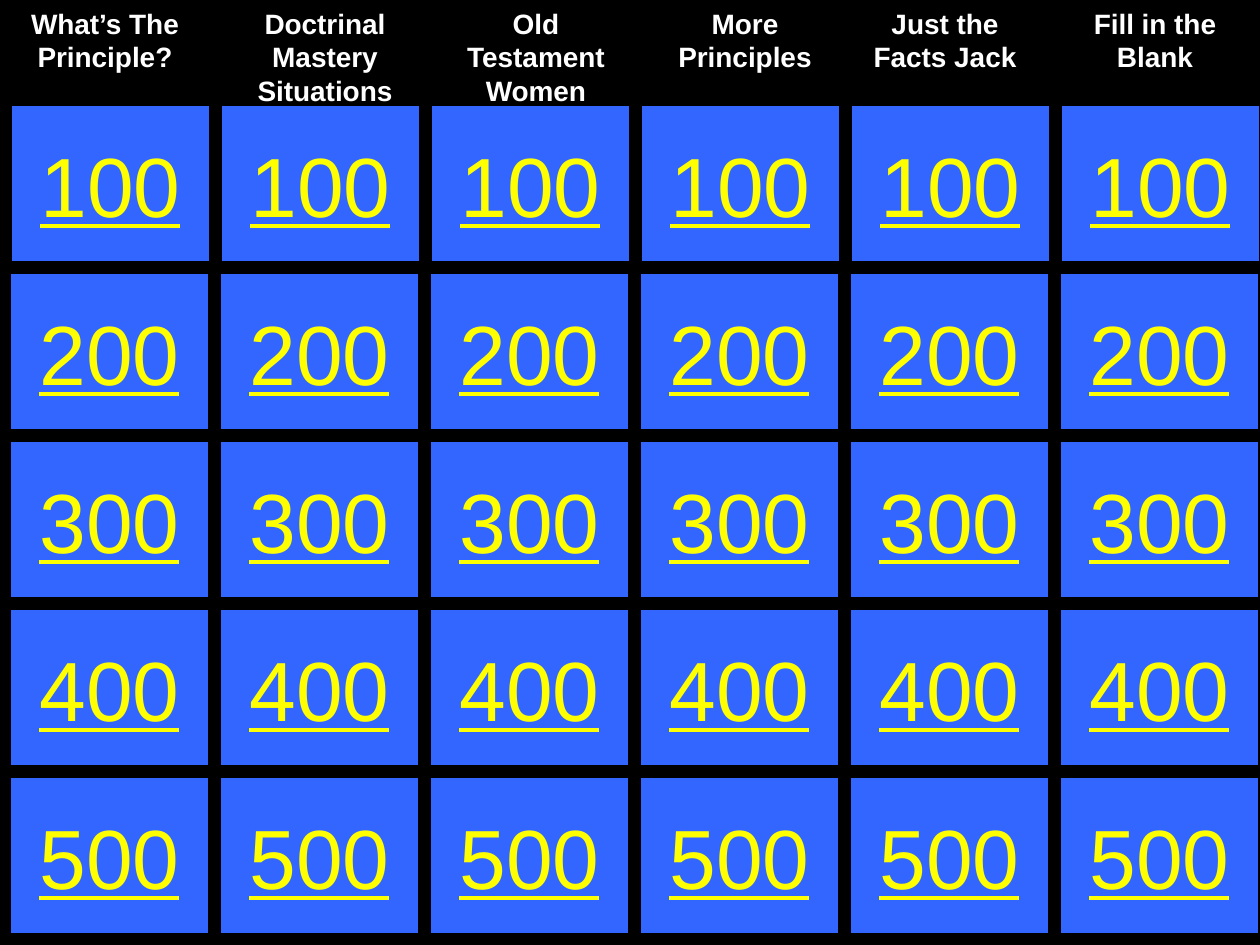
from dataclasses import dataclass

from pptx import Presentation
from pptx.dml.color import RGBColor
from pptx.enum.shapes import MSO_SHAPE
from pptx.enum.text import MSO_ANCHOR, MSO_AUTO_SIZE, PP_ALIGN
from pptx.util import Emu, Pt

BUTTON = MSO_SHAPE.ACTION_BUTTON_CUSTOM
MIDDLE = MSO_ANCHOR.MIDDLE
GROW = MSO_AUTO_SIZE.SHAPE_TO_FIT_TEXT
CENTER = PP_ALIGN.CENTER

PX_PER_INCH = 126
SLIDE_W, SLIDE_H = 1260, 945


@dataclass(frozen=True)
class Theme:
    font: str = "Arial"
    black: RGBColor = RGBColor(0x00, 0x00, 0x00)
    blue: RGBColor = RGBColor(0x33, 0x66, 0xFF)
    yellow: RGBColor = RGBColor(0xFF, 0xFF, 0x00)
    white: RGBColor = RGBColor(0xFF, 0xFF, 0xFF)
    heading_size: int = 16
    value_size: int = 48
    line_width: float = 0.75


THEME = Theme()

# Category text, left edge and height
CATEGORIES = [
    ("What’s The Principle?", 0, 81),
    ("Doctrinal Mastery Situations", 220, 115),
    ("Old Testament Women", 431, 115),
    ("More Principles", 640, 81),
    ("Just the Facts Jack", 840, 81),
    ("Fill in the Blank", 1050, 81),
]
HEADING_W = 210

# Button grid
VALUES = [100, 200, 300, 400, 500]
GRID_LEFT, GRID_TOP = 10, 105
COL_STEP, ROW_STEP = 210, 168
BUTTON_W, BUTTON_H = 199, 157


def px(n):
    return Emu(round(n * 914400 / PX_PER_INCH))


def set_text(tf, text, size, color):
    tf.text = text
    p = tf.paragraphs[0]
    p.alignment = CENTER
    font = p.runs[0].font
    font.name = THEME.font
    font.size = Pt(size)
    font.color.rgb = color
    return font


def add_heading(slide, text, left, height):
    box = slide.shapes.add_textbox(px(left), 0, px(HEADING_W), px(height))
    tf = box.text_frame
    tf.word_wrap = True
    tf.auto_size = GROW
    set_text(tf, text, THEME.heading_size, THEME.white).bold = True


def add_button(slide, value, left, top):
    s = slide.shapes.add_shape(BUTTON, px(left), px(top), px(BUTTON_W), px(BUTTON_H))
    s.shadow.inherit = False
    s.fill.solid()
    s.fill.fore_color.rgb = THEME.blue
    s.line.color.rgb = THEME.black
    s.line.width = Pt(THEME.line_width)
    tf = s.text_frame
    tf.word_wrap = False
    tf.vertical_anchor = MIDDLE
    set_text(tf, str(value), THEME.value_size, THEME.yellow).underline = True


def main():
    prs = Presentation()
    prs.slide_width, prs.slide_height = px(SLIDE_W), px(SLIDE_H)
    slide = prs.slides.add_slide(prs.slide_layouts[6])
    slide.background.fill.solid()
    slide.background.fill.fore_color.rgb = THEME.black

    # Point buttons; the first row sits one pixel further right
    for row, value in enumerate(VALUES):
        left = GRID_LEFT + (1 if row == 0 else 0)
        for col in range(len(CATEGORIES)):
            add_button(slide, value, left + col * COL_STEP, GRID_TOP + row * ROW_STEP)

    # Category headings
    for text, left, height in CATEGORIES:
        add_heading(slide, text, left, height)

    prs.save("out.pptx")


if __name__ == "__main__":
    main()
